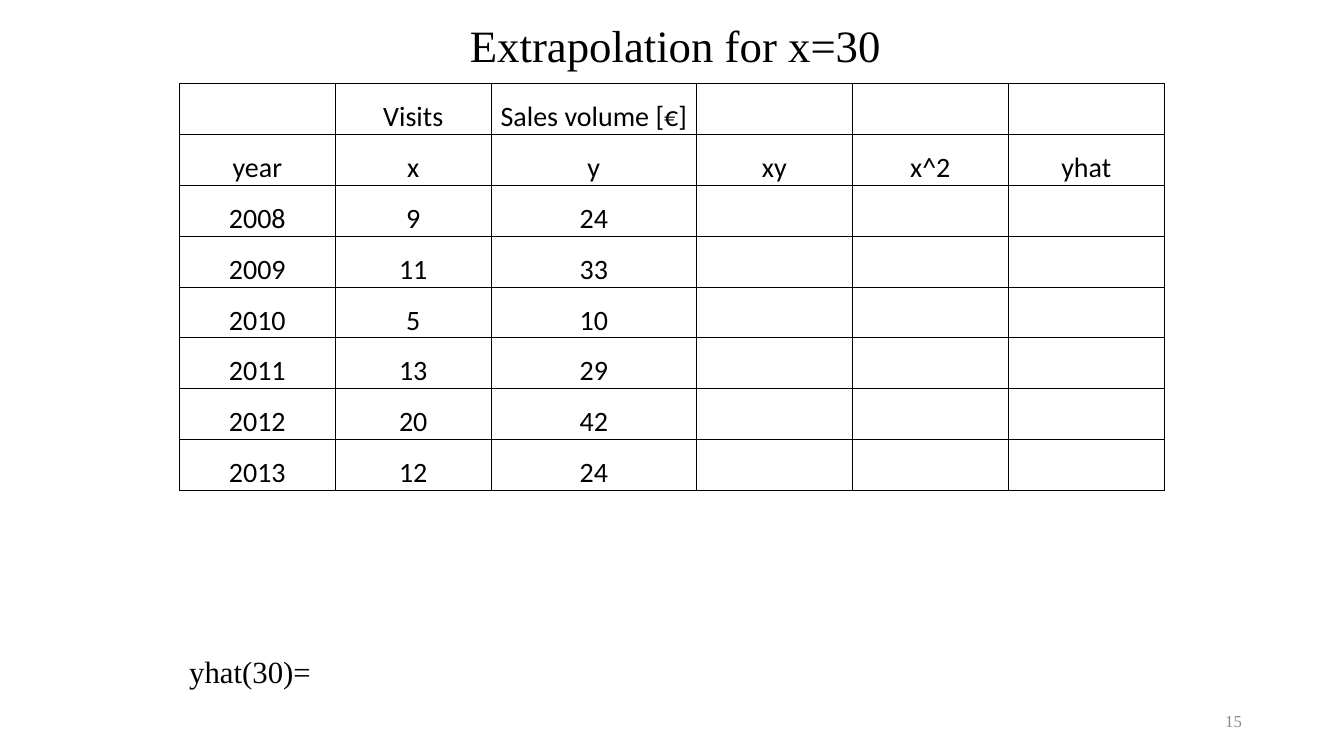
from dataclasses import dataclass

from lxml import etree
from pptx import Presentation
from pptx import util as u
from pptx.dml.color import RGBColor
from pptx.enum import text as t
from pptx.oxml import ns

HUES = {"ink": "000000", "page": "8C8C8C"}
SERIF, SANS = "Times New Roman", "Calibri"


@dataclass
class Label:
    words: str
    box: tuple[float, float, float, float]
    size: int
    hue: str = "ink"
    align: t.PP_ALIGN = t.PP_ALIGN.LEFT
    anchor: t.MSO_ANCHOR = t.MSO_ANCHOR.TOP


TITLE = Label("Extrapolation for x=30", (4.72, 0.33, 24.61, 1.8), 32,
              align=t.PP_ALIGN.CENTER)
NOTES = [
    Label("yhat(30)=", (4.52, 16.33, 24.61, 1.4), 22),
    Label("15", (23.93, 17.65, 7.62, 1.02), 12, "page",
          t.PP_ALIGN.RIGHT, t.MSO_ANCHOR.MIDDLE),
]

HEADS = [("", "Visits", "Sales volume [€]"),
         ("year", "x", "y", "xy", "x^2", "yhat")]
DATA = [(2008, 9, 24), (2009, 11, 33), (2010, 5, 10),
        (2011, 13, 29), (2012, 20, 42), (2013, 12, 24)]
WIDTHS = [3.93, 3.93, 5.17, 3.93, 3.93, 3.93]
ROW = 1.28


def apply(item, form: dict) -> None:
    for key, value in form.items():
        setattr(item, key, value)


def style(para, face: str, size: int, hue: str, align) -> None:
    para.alignment = align
    apply(para.font, {"name": face, "size": u.Pt(size), "bold": False})
    para.font.color.rgb = RGBColor.from_string(HUES[hue])


def place(shape, label: Label) -> None:
    left, top, width, height = map(u.Cm, label.box)
    apply(shape, {"left": left, "top": top, "width": width, "height": height})
    frame = shape.text_frame
    apply(frame, {"text": label.words, "word_wrap": True,
                  "auto_size": t.MSO_AUTO_SIZE.NONE,
                  "vertical_anchor": label.anchor})
    style(frame.paragraphs[0], SERIF, label.size, label.hue, label.align)


def border(cell) -> None:
    props = cell._tc.get_or_add_tcPr()
    for spot, side in enumerate("LRTB"):
        line = etree.Element(ns.qn(f"a:ln{side}"), w=str(u.Pt(0.5)))
        fill = etree.SubElement(line, ns.qn("a:solidFill"))
        etree.SubElement(fill, ns.qn("a:srgbClr"), val=HUES["ink"])
        props.insert(spot, line)


def fill_cell(cell, words: str) -> None:
    cell.fill.background()
    edge = u.Cm(0.02)
    apply(cell, {"text": words, "vertical_anchor": t.MSO_ANCHOR.BOTTOM,
                 "margin_left": edge, "margin_right": edge,
                 "margin_top": edge, "margin_bottom": 0})
    style(cell.text_frame.paragraphs[0], SANS, 20, "ink", t.PP_ALIGN.CENTER)
    border(cell)


def draw_table(slide) -> None:
    rows = HEADS + DATA
    grid = slide.shapes.add_table(
        len(rows), len(WIDTHS), u.Cm(4.52), u.Cm(2.11),
        u.Cm(sum(WIDTHS)), u.Cm(ROW * len(rows))).table
    apply(grid, {"first_row": False, "horz_banding": False})
    for col, width in zip(grid.columns, WIDTHS):
        col.width = u.Cm(width)
    for r, row in enumerate(rows):
        grid.rows[r].height = u.Cm(ROW)
        for c in range(len(WIDTHS)):
            fill_cell(grid.cell(r, c), str(row[c]) if c < len(row) else "")


def main() -> None:
    deck = Presentation()
    apply(deck, {"slide_width": u.Cm(33.87), "slide_height": u.Cm(19.05)})
    slide = deck.slides.add_slide(deck.slide_layouts[5])

    # Title, result line and page number
    place(slide.shapes.title, TITLE)
    for note in NOTES:
        place(slide.shapes.add_textbox(0, 0, 0, 0), note)

    # Regression worksheet
    draw_table(slide)
    deck.save("out.pptx")


if __name__ == "__main__":
    main()
